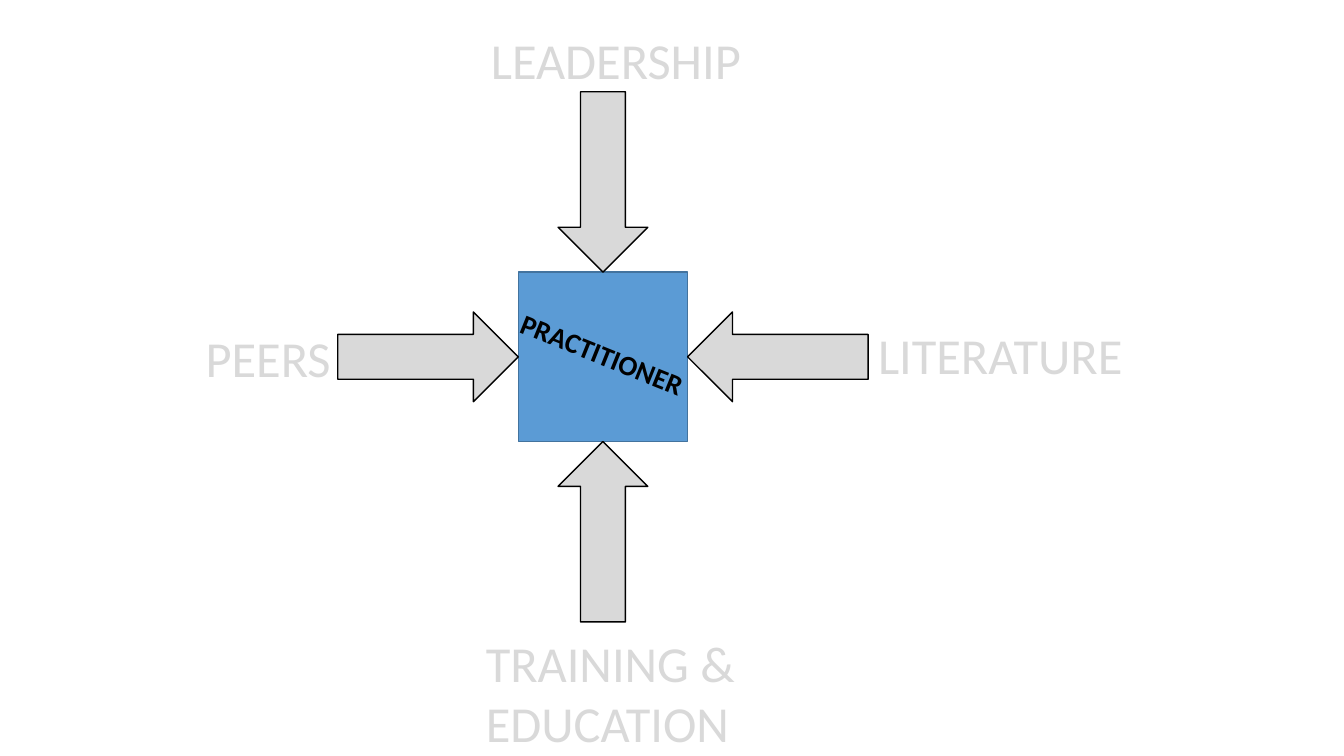
from pptx import Presentation
from pptx.dml.color import RGBColor
from pptx.enum.shapes import MSO_SHAPE
from pptx.enum.text import MSO_AUTO_SIZE
from pptx.util import Inches, Pt

RECTANGLE = MSO_SHAPE.RECTANGLE
RIGHT_ARROW = MSO_SHAPE.RIGHT_ARROW
DOWN_ARROW = MSO_SHAPE.DOWN_ARROW
FIT_TEXT = MSO_AUTO_SIZE.SHAPE_TO_FIT_TEXT

COLORS = {"core": "5B9BD5", "core_edge": "43739E", "grey": "D9D9D9", "black": "000000"}
FONT = "Calibri"
BLANK_LAYOUT = 6

# Centre of the diagram and sizes, in inches
CENTER_X, CENTER_Y = 5.98, 3.54
CORE_SIDE = 1.68
ARROW_LENGTH, ARROW_WIDTH = 1.79, 0.89
ARROW_OFFSET = (CORE_SIDE + ARROW_LENGTH) / 2

# Influence, label box (left, top, width, height), side of the core (x, y)
INFLUENCES = [
    ("LEADERSHIP", (4.77, 0.24, 2.77, 0.71), (0, -1)),
    ("PEERS", (1.94, 3.2, 1.48, 0.71), (-1, 0)),
    ("LITERATURE", (8.61, 3.17, 2.71, 0.71), (1, 0)),
    ("TRAINING &\nEDUCATION", (4.72, 6.22, 2.89, 1.31), (0, 1)),
]


def rgb(name):
    return RGBColor.from_string(COLORS[name])


def add_block(slide, preset, center, size, fill, edge, rotation=0):
    """Draw a filled preset shape around its centre point."""
    (x, y), (width, height) = center, size
    block = slide.shapes.add_shape(
        preset, Inches(x - width / 2), Inches(y - height / 2),
        Inches(width), Inches(height))
    block.rotation = rotation
    block.shadow.inherit = False
    block.fill.solid()
    block.fill.fore_color.rgb = rgb(fill)
    block.line.color.rgb = rgb(edge)
    block.line.width = Pt(1)


def add_inward_arrow(slide, side):
    """Draw an arrow that points at the core from the given side."""
    dx, dy = side
    if dx:
        preset, size = RIGHT_ARROW, (ARROW_LENGTH, ARROW_WIDTH)
    else:
        preset, size = DOWN_ARROW, (ARROW_WIDTH, ARROW_LENGTH)
    center = (CENTER_X + dx * ARROW_OFFSET, CENTER_Y + dy * ARROW_OFFSET)
    rotation = 180 if dx + dy > 0 else 0
    add_block(slide, preset, center, size, "grey", "black", rotation)


def add_label(slide, text, box, size, color, bold=False, rotation=0):
    label = slide.shapes.add_textbox(*(Inches(length) for length in box))
    label.rotation = rotation
    frame = label.text_frame
    frame.text = text
    frame.word_wrap = False
    frame.auto_size = FIT_TEXT
    for paragraph in frame.paragraphs:
        paragraph.font.name = FONT
        paragraph.font.size = Pt(size)
        paragraph.font.bold = bold
        paragraph.font.color.rgb = rgb(color)


def main():
    prs = Presentation()
    prs.slide_width, prs.slide_height = Inches(13.33), Inches(7.5)
    slide = prs.slides.add_slide(prs.slide_layouts[BLANK_LAYOUT])

    # Core square with the arrows around it
    add_block(slide, RECTANGLE, (CENTER_X, CENTER_Y), (CORE_SIDE, CORE_SIDE),
              "core", "core_edge")
    for _, _, side in INFLUENCES:
        add_inward_arrow(slide, side)

    # Labels
    for influence, box, _ in INFLUENCES:
        add_label(slide, influence, box, 36, "grey")
    add_label(slide, "PRACTITIONER", (5.02, 3.3, 1.92, 0.44), 20, "black",
              bold=True, rotation=22)

    prs.save("out.pptx")


if __name__ == "__main__":
    main()
